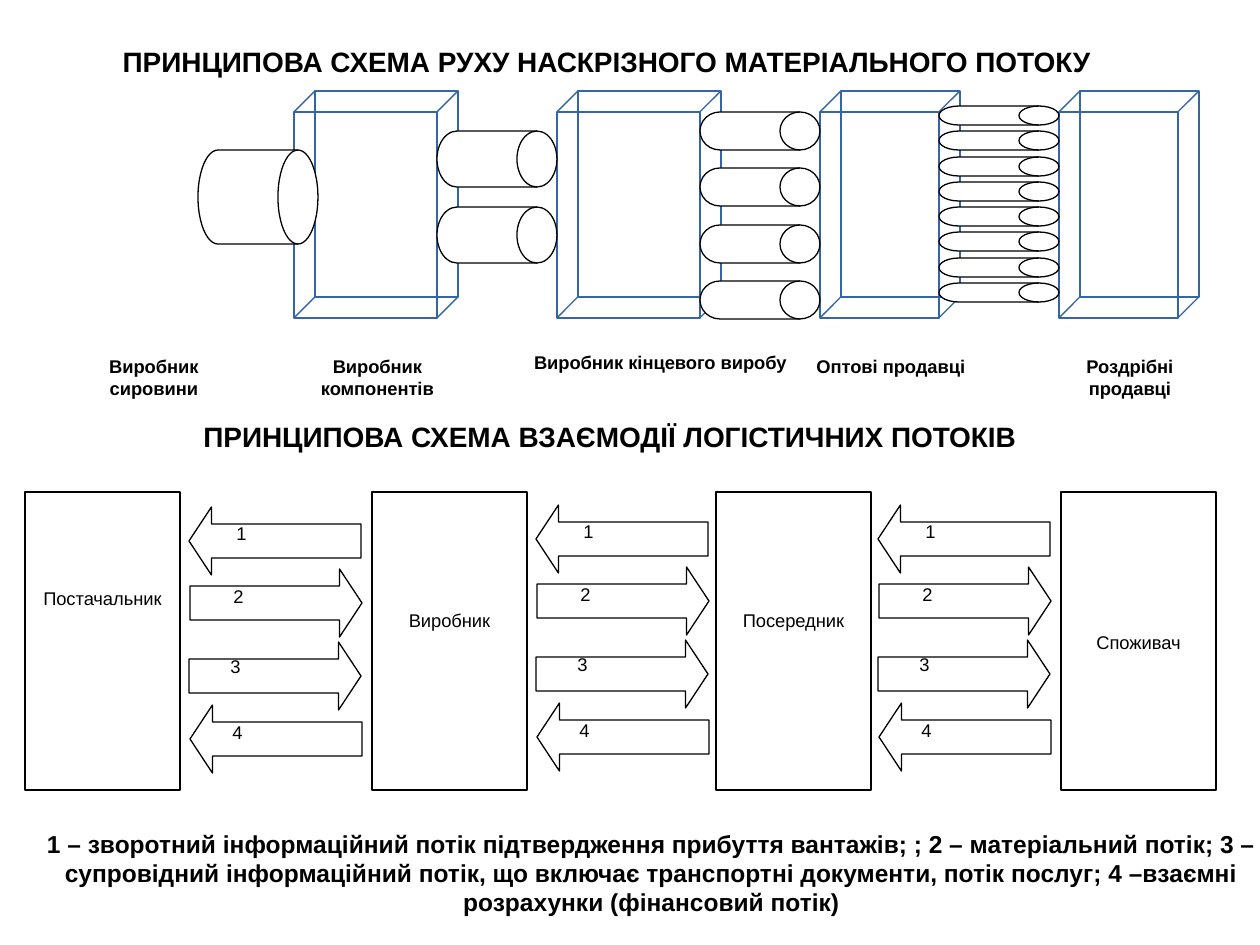
from dataclasses import dataclass
from typing import Optional

from pptx import Presentation
from pptx.dml.color import RGBColor
from pptx.enum.shapes import MSO_SHAPE
from pptx.enum.text import MSO_ANCHOR, PP_ALIGN
from pptx.util import Emu, Pt

RECTANGLE = MSO_SHAPE.RECTANGLE
DRUM = MSO_SHAPE.FLOWCHART_DIRECT_ACCESS_STORAGE
LEFT_ARROW, RIGHT_ARROW = MSO_SHAPE.LEFT_ARROW, MSO_SHAPE.RIGHT_ARROW
TOP, BOTTOM = MSO_ANCHOR.TOP, MSO_ANCHOR.BOTTOM
LEFT, CENTER = PP_ALIGN.LEFT, PP_ALIGN.CENTER
PX_PER_INCH = 126


@dataclass(frozen=True)
class Theme:
    font: str = "Arial"
    ink: RGBColor = RGBColor(0, 0, 0)
    paper: RGBColor = RGBColor(255, 255, 255)
    frame: RGBColor = RGBColor(0x34, 0x65, 0xA4)
    line_width: float = 0.75
    title_size: float = 16
    note_size: float = 14
    label_size: float = 10.5


@dataclass(frozen=True)
class Box:
    left: int
    top: int
    width: int
    height: int


@dataclass(frozen=True)
class Caption:
    text: str
    box: Box
    size: float
    bold: bool = True
    align: PP_ALIGN = CENTER
    anchor: MSO_ANCHOR = TOP


@dataclass(frozen=True)
class DrumStack:
    left: int
    top: int
    span: int  # from the first top to the last
    count: int
    height: int


@dataclass(frozen=True)
class Participant:
    name: str
    left: int
    lead_lines: int  # line heights above the name


@dataclass(frozen=True)
class Flow:
    number: str
    shape_type: MSO_SHAPE
    arrow: tuple[int, int]  # offsets from the top left of the exchange
    label: tuple[int, int]


THEME = Theme()

FRAME_TOP, FRAME_HEIGHT, FRAME_DEPTH = 112, 206, 21
FRAMES = [Box(left, FRAME_TOP, width, FRAME_HEIGHT)
          for left, width in ((294, 143), (557, 143), (820, 119), (1059, 119))]

DRUM_WIDTH = 120
DRUM_STACKS = [
    DrumStack(198, 150, 0, 1, 94),
    DrumStack(437, 131, 76, 2, 56),
    DrumStack(700, 112, 169, 4, 38),
    DrumStack(939, 106, 177, 8, 19),
]

STAGE_LABELS = [
    Caption(text, Box(left, top, width, 76), THEME.label_size)
    for text, left, top, width in (
        ("Виробник сировини", 58, 349, 192),
        ("Виробник компонентів", 270, 349, 215),
        ("Виробник кінцевого виробу", 517, 345, 287),
        ("Оптові продавці", 795, 349, 192),
        ("Роздрібні продавці", 1034, 349, 192),
    )
]

PARTICIPANT_TOP, PARTICIPANT_WIDTH, PARTICIPANT_HEIGHT = 492, 155, 298
LEAD_LINE, LEAD_INSET = 22, 7
PARTICIPANTS = [
    Participant("Постачальник", 25, 4),
    Participant("Виробник", 372, 5),
    Participant("Посередник", 716, 5),
    Participant("Споживач", 1061, 6),
]

EXCHANGES = ((189, 507), (536, 505), (878, 505))
FLOWS = [
    Flow("1", LEFT_ARROW, (0, 0), (35, 9)),
    Flow("2", RIGHT_ARROW, (1, 62), (32, 72)),
    Flow("3", RIGHT_ARROW, (0, 135), (29, 142)),
    Flow("4", LEFT_ARROW, (1, 198), (31, 208)),
]

HEADINGS = [
    Caption("ПРИНЦИПОВА СХЕМА РУХУ НАСКРІЗНОГО МАТЕРІАЛЬНОГО ПОТОКУ",
            Box(76, 4, 1062, 80), THEME.title_size, anchor=BOTTOM),
    Caption("ПРИНЦИПОВА СХЕМА ВЗАЄМОДІЇ ЛОГІСТИЧНИХ ПОТОКІВ",
            Box(38, 379, 1144, 80), THEME.title_size, anchor=BOTTOM),
    Caption("1 – зворотний інформаційний потік підтвердження прибуття вантажів; ; "
            "2 – матеріальний потік; 3 – супровідний інформаційний потік, що включає "
            "транспортні документи, потік послуг; 4 –взаємні розрахунки (фінансовий потік)",
            Box(34, 791, 1235, 132), THEME.note_size, anchor=BOTTOM),
]


def px(length: int) -> Emu:
    return Emu(round(length * 914400 / PX_PER_INCH))


def place(box: Box) -> tuple[Emu, ...]:
    return px(box.left), px(box.top), px(box.width), px(box.height)


def write(shape, text: str, size: float, bold: bool, align: PP_ALIGN) -> None:
    paragraph = shape.text_frame.paragraphs[0]
    paragraph.alignment = align
    run = paragraph.add_run()
    run.text = text
    for name, value in {"name": THEME.font, "size": Pt(size), "bold": bold}.items():
        setattr(run.font, name, value)
    run.font.color.rgb = THEME.ink


def draw_caption(slide, caption: Caption) -> None:
    shape = slide.shapes.add_textbox(*place(caption.box))
    frame_format = {"word_wrap": True, "vertical_anchor": caption.anchor}
    for name, value in frame_format.items():
        setattr(shape.text_frame, name, value)
    write(shape, caption.text, caption.size, caption.bold, caption.align)


def draw_outlined(slide, shape_type: MSO_SHAPE, box: Box):
    """Add a white preset shape with a thin black outline."""
    shape = slide.shapes.add_shape(shape_type, *place(box))
    shape.shadow.inherit = False
    shape.fill.solid()
    shape.fill.fore_color.rgb = THEME.paper
    shape.line.color.rgb = THEME.ink
    shape.line.width = Pt(THEME.line_width)
    return shape


def draw_wire_frame(slide, box: Box) -> None:
    """Outline a see-through block: front face, back face and four depth edges."""
    right, bottom = box.left + box.width, box.top + box.height
    front = [(box.left, box.top), (right, box.top), (right, bottom), (box.left, bottom)]
    back = [(x + FRAME_DEPTH, y - FRAME_DEPTH) for x, y in front]
    contours = [front + front[:1], back + back[:1], *zip(front, back)]

    builder = None
    for contour in contours:
        start, *rest = [(px(x), px(y)) for x, y in contour]
        if builder is None:
            builder = slide.shapes.build_freeform(*start)
        else:
            builder.move_to(*start)
        builder.add_line_segments(rest, close=False)
    shape = builder.convert_to_shape()
    shape.shadow.inherit = False
    shape.fill.background()
    shape.line.color.rgb = THEME.frame
    shape.line.width = Pt(THEME.line_width)


def draw_drum_stack(slide, stack: DrumStack) -> None:
    for index in range(stack.count):
        offset = round(stack.span * index / max(stack.count - 1, 1))
        draw_outlined(slide, DRUM, Box(stack.left, stack.top + offset, DRUM_WIDTH, stack.height))


def draw_participant(slide, participant: Participant) -> None:
    shape = draw_outlined(slide, RECTANGLE, Box(
        participant.left, PARTICIPANT_TOP, PARTICIPANT_WIDTH, PARTICIPANT_HEIGHT))
    shape.text_frame.vertical_anchor = TOP
    shape.text_frame.margin_top = px(LEAD_INSET + LEAD_LINE * participant.lead_lines)
    write(shape, participant.name, THEME.label_size, False, CENTER)


def draw_exchange(slide, left: int, top: int) -> None:
    """Draw the four numbered flows between two neighbouring participants."""
    for flow in FLOWS:
        x, y = flow.arrow
        arrow = draw_outlined(slide, flow.shape_type, Box(left + x, top + y, 172, 68))
        arrow.adjustments[0], arrow.adjustments[1] = 0.5, 0.33
    for flow in FLOWS:
        x, y = flow.label
        draw_caption(slide, Caption(flow.number, Box(left + x, top + y, 96, 59),
                                    THEME.label_size, bold=False, align=LEFT))


def main() -> None:
    presentation = Presentation()
    presentation.slide_width, presentation.slide_height = px(1260), px(945)
    slide = presentation.slides.add_slide(presentation.slide_layouts[6])

    for frame in FRAMES:
        draw_wire_frame(slide, frame)
    for stack in DRUM_STACKS:
        draw_drum_stack(slide, stack)
    for participant in PARTICIPANTS:
        draw_participant(slide, participant)
    for left, top in EXCHANGES:
        draw_exchange(slide, left, top)
    for caption in STAGE_LABELS + HEADINGS:
        draw_caption(slide, caption)
    presentation.save("out.pptx")


if __name__ == "__main__":
    main()
